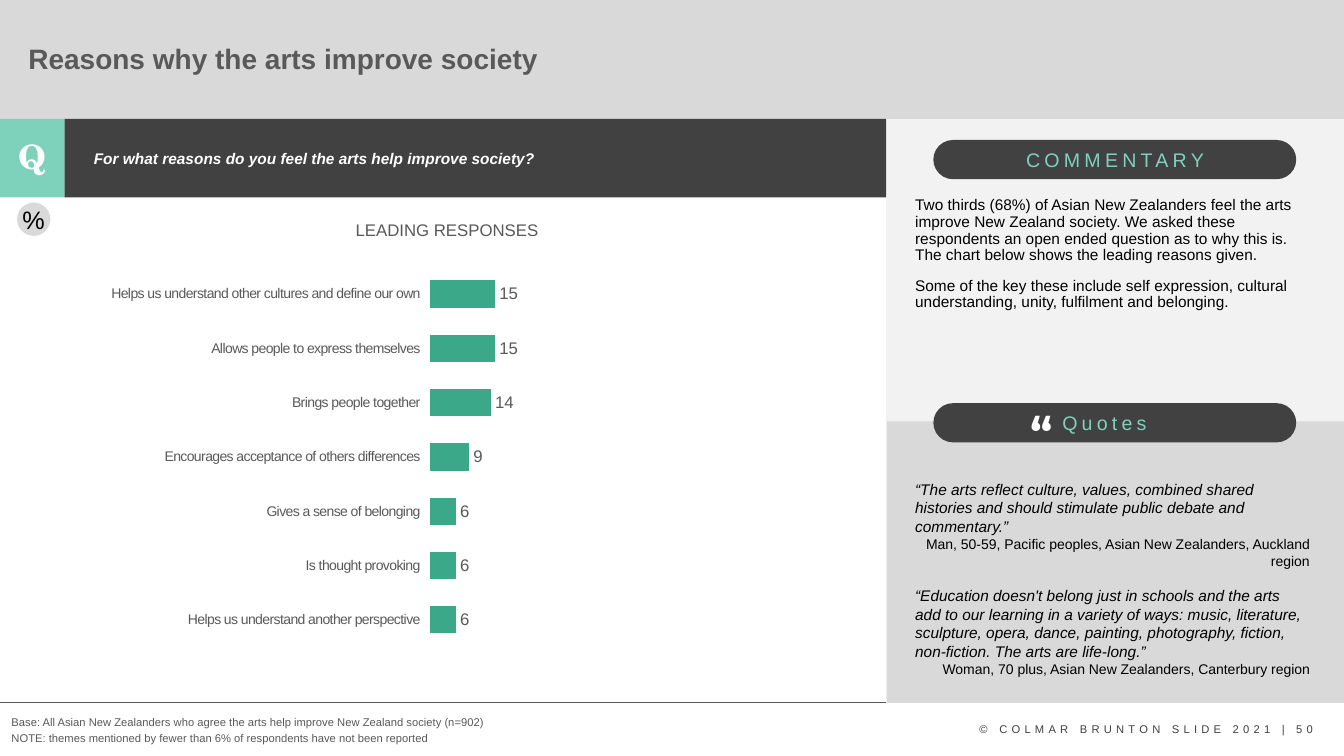
from dataclasses import dataclass, field

from lxml import etree
from pptx import Presentation
from pptx import slide as ps
from pptx import util as u
from pptx.chart import data as cd
from pptx.dml import color as co
from pptx.enum import chart as ec, shapes as es, text as et
from pptx.oxml import ns
from pptx.text import text as tt

WHITE = co.RGBColor(0xFF, 0xFF, 0xFF)
BLACK = co.RGBColor(0, 0, 0)
DARK = co.RGBColor(0x41, 0x41, 0x41)
INK = co.RGBColor(0x40, 0x40, 0x40)
GREY = co.RGBColor(0x59, 0x59, 0x59)
SILVER = co.RGBColor(0xD9, 0xD9, 0xD9)
PALE = co.RGBColor(0xF2, 0xF2, 0xF2)
MINT = co.RGBColor(0x7E, 0xD2, 0xBB)
GREEN = co.RGBColor(0x3A, 0xA8, 0x89)

RECT = es.MSO_SHAPE.RECTANGLE
PILL = es.MSO_SHAPE.ROUNDED_RECTANGLE
LEFT, MID, RIGHT = et.PP_ALIGN.LEFT, et.PP_ALIGN.CENTER, et.PP_ALIGN.RIGHT

Spot = tuple[float, float, float, float]


@dataclass
class Block:
    spot: Spot
    fill: co.RGBColor
    kind: es.MSO_SHAPE = RECT


@dataclass
class Line:
    text: str
    style: dict = field(default_factory=dict)


@dataclass
class Label:
    spot: Spot
    lines: list[Line]
    wrap: bool = True
    grow: bool = True
    flush: bool = False


BACK = [
    Block((0, 0, 960, 85), SILVER),
    Block((633, 85, 327, 417), PALE),
    Block((46, 85, 587, 56), DARK),
    Block((0, 85, 46, 56), MINT),
]
FRONT = [
    Block((633.5, 301, 326.5, 201), SILVER),
    Block((666.7, 100, 259.2, 28), DARK, PILL),
    Block((666.7, 288, 259.2, 28), DARK, PILL),
]
HEAD = dict(size=14, color=MINT, track=3)
NOTE = dict(size=8, color=GREY)
TALK = dict(size=11, lead=0.9)
QUOTE = dict(size=11, italic=True)
NAME = dict(size=10, align=RIGHT)

LABELS = [
    Label((692.6, 512.6, 260, 17.3), [
        Line("© COLMAR BRUNTON SLIDE 2021 | 50", dict(size=8, color=INK, track=3))]),
    Label((5.8, 93.6, 33.8, 36), [
        Line("Q", dict(size=24, font="TeX Gyre Schola", color=WHITE, bold=True, align=MID))]),
    Label((725.8, 102.2, 145.4, 24.5), [Line("COMMENTARY", HEAD)], wrap=False),
    Label((751.7, 290.2, 78.5, 24.5), [Line("Quotes", HEAD)], wrap=False),
    Label((735.8, 300.2, 54.7, 23), [
        Line("“", dict(size=32, font="Montserrat", color=WHITE, bold=True, track=3, lead=0.8))],
        grow=False, flush=True),
    Label((214.6, 153.4, 209.5, 21.6), [
        Line("LEADING RESPONSES", dict(size=12, color=GREY, align=MID))]),
    Label((1.1, 507.6, 515, 17.3), [
        Line("Base: All Asian New Zealanders who agree the arts help improve "
             "New Zealand society (n=902)", NOTE)]),
    Label((1.1, 519.1, 515, 17.3), [
        Line("NOTE: themes mentioned by fewer than 6% of respondents have not been reported", NOTE)]),
    Label((646.6, 137.5, 296, 348.5), [
        Line("Two thirds (68%) of Asian New Zealanders feel the arts improve New Zealand society. "
             "We asked these respondents an open ended question as to why this is. "
             "The chart below shows the leading reasons given.", TALK),
        Line("Some of the key these include self expression, cultural understanding, unity, "
             "fulfilment and belonging.", TALK | dict(gap=10))], grow=False),
    Label((646.6, 339.1, 296, 150.5), [
        Line("“The arts reflect culture, values, combined shared histories and should "
             "stimulate public debate and commentary.”", QUOTE),
        Line("Man, 50-59, Pacific peoples, Asian New Zealanders, Auckland region", NAME),
        Line("“Education doesn't belong just in schools and the arts add to our learning in a "
             "variety of ways: music, literature, sculpture, opera, dance, painting, photography, "
             "fiction, non-fiction. The arts are life-long.”", QUOTE | dict(gap=12.65)),
        Line("Woman, 70 plus, Asian New Zealanders, Canterbury region", NAME)]),
]
REASONS = {
    "Helps us understand other cultures and define our own": 15,
    "Allows people to express themselves": 15,
    "Brings people together": 14,
    "Encourages acceptance of others differences": 9,
    "Gives a sense of belonging": 6,
    "Is thought provoking": 6,
    "Helps us understand another perspective": 6,
    "": None,
}


def place(spot: Spot) -> list[u.Length]:
    return [u.Pt(n) for n in spot]


def write(para: tt._Paragraph, words: str, *, size: float, color: co.RGBColor = BLACK,
          font: str = "Arial", bold: bool = False, italic: bool = False,
          align: et.PP_ALIGN = LEFT, lead: float = 1.0, gap: float = 0, track: float = 0) -> None:
    para.alignment, para.line_spacing, para.space_before = align, lead, u.Pt(gap)
    run = para.add_run()
    run.text = words
    run.font.name, run.font.size = font, u.Pt(size)
    run.font.bold, run.font.italic = bold, italic
    run.font.color.rgb = color
    if track:
        run._r.get_or_add_rPr().set("spc", str(round(track * 100)))


def flat(frame: tt.TextFrame) -> None:
    frame.margin_left = frame.margin_right = frame.margin_top = frame.margin_bottom = 0


def block(slide: ps.Slide, item: Block):
    shape = slide.shapes.add_shape(item.kind, *place(item.spot))
    shape.shadow.inherit = False
    shape.fill.solid()
    shape.fill.fore_color.rgb = item.fill
    shape.line.fill.background()
    if item.kind == PILL:
        shape.adjustments[0] = 0.5
    return shape


def label(slide: ps.Slide, item: Label) -> None:
    frame = slide.shapes.add_textbox(*place(item.spot)).text_frame
    frame.word_wrap = item.wrap
    frame.auto_size = et.MSO_AUTO_SIZE.SHAPE_TO_FIT_TEXT if item.grow else et.MSO_AUTO_SIZE.NONE
    if item.flush:
        flat(frame)
        frame.vertical_anchor = et.MSO_ANCHOR.MIDDLE
    for i, line in enumerate(item.lines):
        para = frame.add_paragraph() if i else frame.paragraphs[0]
        write(para, line.text, **line.style)


def holder(slide: ps.Slide, shape, spot: Spot, anchor: et.MSO_ANCHOR, words: str, **style) -> None:
    shape.left, shape.top, shape.width, shape.height = place(spot)
    slide.shapes._spTree.append(shape._element)
    frame = shape.text_frame
    frame.auto_size, frame.vertical_anchor = et.MSO_AUTO_SIZE.NONE, anchor
    para = frame.paragraphs[0]
    props = para._p.get_or_add_pPr()
    props.set("marL", "0")
    props.set("indent", "0")
    etree.SubElement(props, ns.qn("a:buNone"))
    write(para, words, lead=0.9, **style)


def graph(slide: ps.Slide) -> None:
    data = cd.CategoryChartData()
    data.categories = list(REASONS)
    data.add_series("Series 1", list(REASONS.values()))
    chart = slide.shapes.add_chart(ec.XL_CHART_TYPE.BAR_CLUSTERED,
                                   *place((13, 175.7, 605.5, 325.4)), data).chart
    chart.has_legend = chart.has_title = False
    chart.font.name, chart.font.size, chart.font.color.rgb = "Arial", u.Pt(10), BLACK
    cat, val = chart.category_axis, chart.value_axis
    cat.reverse_order = True
    cat.format.line.fill.background()
    font = cat.tick_labels.font
    font.name, font.size, font.color.rgb = "Arial", u.Pt(10), GREY
    font._element.set("spc", "-30")
    val.minimum_scale, val.maximum_scale = 0, 100
    val.has_major_gridlines = val.visible = False
    plot = chart.plots[0]
    plot.gap_width, plot.vary_by_categories = 100, False
    bars = plot.series[0]
    bars.format.fill.solid()
    bars.format.fill.fore_color.rgb = GREEN
    tags = bars.data_labels
    tags.show_value, tags.position = True, ec.XL_LABEL_POSITION.OUTSIDE_END
    tags.font.name, tags.font.size, tags.font.color.rgb = "Arial", u.Pt(12), GREY
    area = chart._chartSpace.chart.plotArea
    for old in area.findall(ns.qn("c:layout")):
        area.remove(old)
    lay = etree.Element(ns.qn("c:layout"))
    area.insert(0, lay)
    form = etree.SubElement(lay, ns.qn("c:manualLayout"))
    rules = dict(layoutTarget="inner", xMode="edge", yMode="edge", x=0.486, y=0.046, w=0.514, h=0.954)
    for key, value in rules.items():
        etree.SubElement(form, ns.qn(f"c:{key}")).set("val", str(value))


def main() -> None:
    deck = Presentation()
    deck.slide_width, deck.slide_height = u.Pt(960), u.Pt(540)
    slide = deck.slides.add_slide(deck.slide_layouts[1])
    rule = slide.shapes.add_connector(es.MSO_CONNECTOR.STRAIGHT, *place((0, 502, 960, 502)))
    rule.line.color.rgb, rule.line.width = GREY, u.Pt(0.5)
    etree.SubElement(rule._element.spPr, ns.qn("a:effectLst"))
    for item in BACK:
        block(slide, item)
    holder(slide, slide.shapes.title, (13, 15.1, 805.7, 56.2), et.MSO_ANCHOR.MIDDLE,
           "Reasons why the arts improve society", size=20, color=GREY, bold=True)
    holder(slide, slide.placeholders[1], (59.8, 104.4, 547.2, 33.1), et.MSO_ANCHOR.TOP,
           "For what reasons do you feel the arts help improve society?",
           size=11, color=WHITE, bold=True, italic=True)
    badge = block(slide, Block((12.2, 144.7, 23.8, 23.8), SILVER, es.MSO_SHAPE.OVAL))
    flat(badge.text_frame)
    badge.text_frame.word_wrap = False
    write(badge.text_frame.paragraphs[0], "%", size=18, align=MID)
    graph(slide)
    for item in FRONT:
        block(slide, item)
    for item in LABELS:
        label(slide, item)
    deck.save("out.pptx")


if __name__ == "__main__":
    main()
